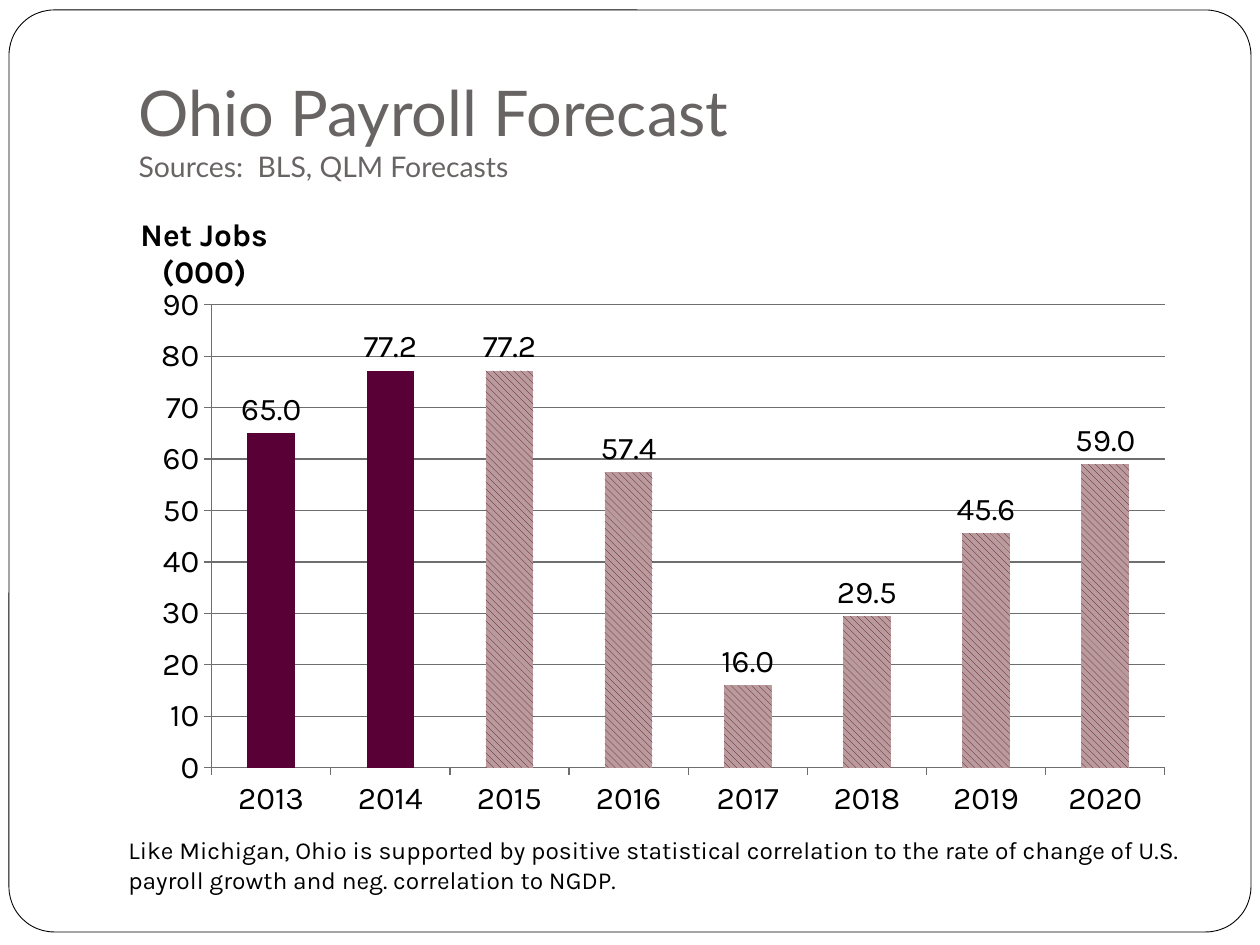
from typing import NamedTuple, Optional

from lxml.etree import SubElement
from pptx import Presentation
from pptx.chart.data import CategoryChartData
from pptx.dml.color import RGBColor
from pptx.enum.chart import XL_CHART_TYPE as ChartType, XL_LABEL_POSITION as LabelPos
from pptx.enum.chart import XL_TICK_MARK as Tick
from pptx.enum.dml import MSO_PATTERN as Pattern
from pptx.enum.shapes import MSO_SHAPE as Shape
from pptx.enum.text import MSO_ANCHOR as Anchor, PP_ALIGN as Align
from pptx.oxml.ns import qn
from pptx.util import Emu, Pt

EMU_PER_PX = 914400 / 126
COLORS = {
    "paper": "FFFFFF",
    "ink": "000000",
    "title": "696464",
    "grid": "6E6E6E",
    "actual": "590036",
    "forecast": "B99B9B",
}
HEADING_FONT, BODY_FONT = "Lato", "Karla"


class Box(NamedTuple):
    left: int
    top: int
    width: int
    height: int

    def emu(self) -> list[Emu]:
        return [px(v) for v in self]


class Year(NamedTuple):
    label: str
    jobs: float
    actual: bool = False


FRAME = Box(9, 10, 1242, 922)
TITLE = Box(126, 38, 1071, 158)
CHART = Box(126, 199, 1071, 630)
NOTE = Box(116, 829, 1092, 72)

YEARS = [
    Year("2013", 65.0, True),
    Year("2014", 77.2, True),
    Year("2015", 77.2),
    Year("2016", 57.4),
    Year("2017", 16.0),
    Year("2018", 29.5),
    Year("2019", 45.6),
    Year("2020", 59.0),
]


def px(n: int) -> Emu:
    return Emu(round(n * EMU_PER_PX))


def rgb(name: str) -> RGBColor:
    return RGBColor.from_string(COLORS[name])


def style_font(font, face: str, size: float, color: str, bold: bool = False) -> None:
    font.name, font.size, font.bold = face, Pt(size), bold
    font.color.rgb = rgb(color)


def add_frame(slide) -> None:
    """Draw the rounded page border behind everything else."""
    sp = slide.shapes.add_shape(Shape.ROUNDED_RECTANGLE, *FRAME.emu())
    sp.adjustments[0] = 0.049
    sp.shadow.inherit = False
    sp.fill.solid()
    sp.fill.fore_color.rgb = rgb("paper")
    sp.line.color.rgb = rgb("ink")
    sp.line.width = Pt(0.5)
    slide.shapes._spTree.insert(2, sp._element)


def fill_title(slide) -> None:
    sp = slide.shapes.title
    sp.left, sp.top, sp.width, sp.height = TITLE.emu()
    tf = sp.text_frame
    tf.word_wrap = True
    tf.vertical_anchor = Anchor.BOTTOM
    tf.margin_bottom = Pt(7.2)
    tf.text = "Ohio Payroll Forecast\nSources:  BLS, QLM Forecasts"
    for p, size in zip(tf.paragraphs, (36, 16.2)):
        p.alignment = Align.LEFT
        p.line_spacing = 1.0
        p.space_before = Pt(0)
        style_font(p.runs[0].font, HEADING_FONT, size, "title")


def set_layout(parent, before: str, x: float, y: float,
               size: Optional[tuple[float, float]] = None) -> None:
    """Place a chart part by fractions of the chart; a size means the inner plot area."""
    for old in parent.findall(qn("c:layout")):
        parent.remove(old)
    layout = parent.makeelement(qn("c:layout"))
    parent.find(qn(before)).addprevious(layout)
    manual = SubElement(layout, qn("c:manualLayout"))
    values = {"xMode": "edge", "yMode": "edge", "x": x, "y": y}
    if size:
        values = {"layoutTarget": "inner", **values, "w": size[0], "h": size[1]}
    for tag, value in values.items():
        SubElement(manual, qn(f"c:{tag}")).set("val", str(value))


def style_axes(chart) -> None:
    value, category = chart.value_axis, chart.category_axis
    value.minimum_scale, value.maximum_scale, value.major_unit = 0, 90, 10
    value.has_major_gridlines = True
    for line in (value.format.line, category.format.line, value.major_gridlines.format.line):
        line.color.rgb = rgb("grid")
        line.width = Pt(0.75)
    for axis in (value, category):
        axis.major_tick_mark = Tick.OUTSIDE
        axis.tick_labels.number_format = "General"
        axis.tick_labels.number_format_is_linked = False

    title = value.axis_title
    tf = title.text_frame
    tf.text = "Net Jobs\n(000)"
    body = tf._txBody.find(qn("a:bodyPr"))
    body.set("rot", "0")
    body.set("vert", "horz")
    for p in tf.paragraphs:
        p.alignment = Align.CENTER
        style_font(p.runs[0].font, BODY_FONT, 18, "ink", bold=True)
    set_layout(title._element, "c:overlay", 0.01, 0.02)


def add_forecast_chart(slide) -> None:
    data = CategoryChartData()
    data.categories = [y.label for y in YEARS]
    data.add_series("Series 1", [y.jobs for y in YEARS])
    chart = slide.shapes.add_chart(ChartType.COLUMN_CLUSTERED, *CHART.emu(), data).chart
    chart.has_legend = chart.has_title = False
    style_font(chart.font, BODY_FONT, 18, "ink")
    style_axes(chart)

    plot = chart.plots[0]
    plot.gap_width = 150
    plot.vary_by_categories = False
    series = plot.series[0]
    fill = series.format.fill
    fill.patterned()
    fill.pattern = Pattern.WIDE_DOWNWARD_DIAGONAL
    fill.fore_color.rgb = rgb("actual")
    fill.back_color.rgb = rgb("forecast")
    for i, year in enumerate(YEARS):
        if year.actual:
            fill = series.points[i].format.fill
            fill.solid()
            fill.fore_color.rgb = rgb("actual")

    labels = series.data_labels
    labels.show_value = True
    labels.position = LabelPos.OUTSIDE_END
    labels.number_format = "#,##0.0"
    labels.number_format_is_linked = False
    style_font(labels.font, BODY_FONT, 18, "ink")
    plot_area = chart._chartSpace.chart.plotArea
    set_layout(plot_area, "c:barChart", 0.08, 0.168, (0.89, 0.735))


def add_note(slide) -> None:
    tf = slide.shapes.add_textbox(*NOTE.emu()).text_frame
    tf.word_wrap = True
    tf.text = ("Like Michigan, Ohio is supported by positive statistical correlation to the "
               "rate of change of U.S. payroll growth and neg. correlation to NGDP.")
    style_font(tf.paragraphs[0].runs[0].font, BODY_FONT, 14, "ink")


def main() -> None:
    prs = Presentation()
    prs.slide_width, prs.slide_height = px(1260), px(945)
    slide = prs.slides.add_slide(prs.slide_layouts[5])
    add_frame(slide)
    fill_title(slide)
    add_forecast_chart(slide)
    add_note(slide)
    prs.save("out.pptx")


if __name__ == "__main__":
    main()
